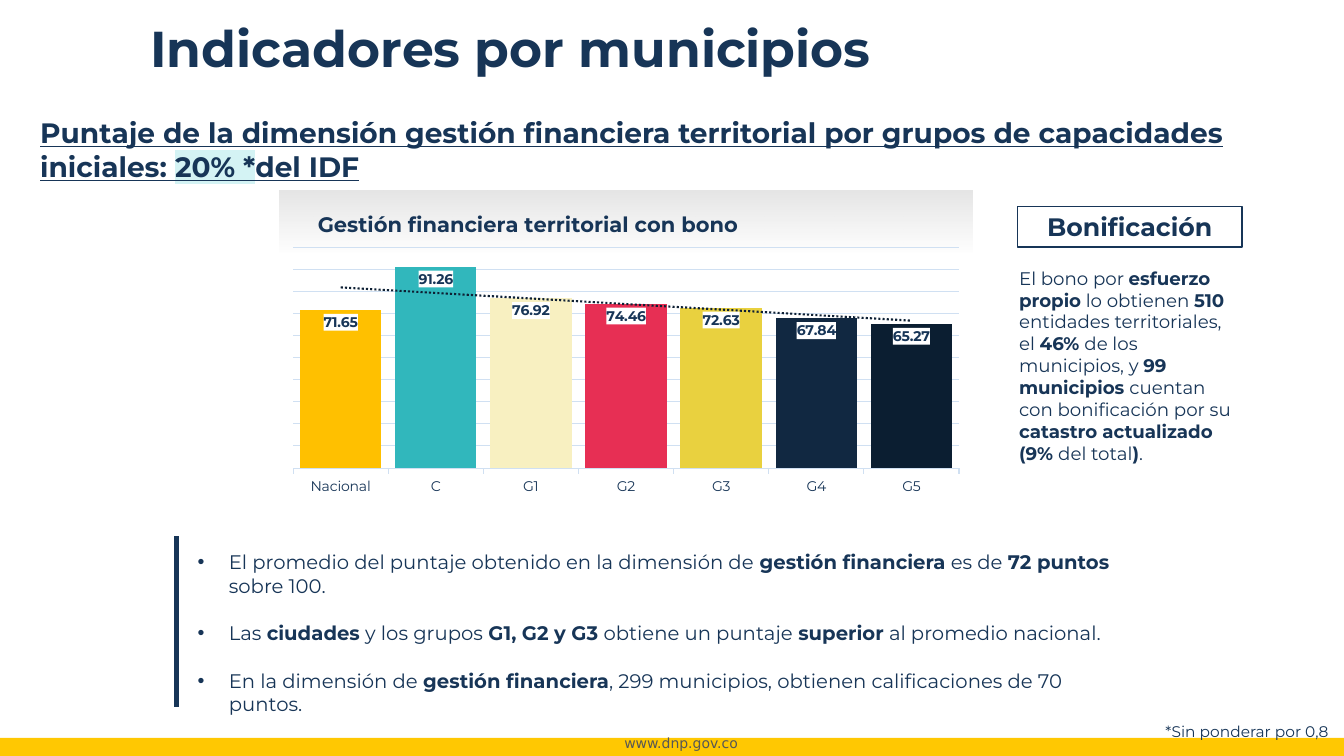
from dataclasses import dataclass, field

from lxml import etree
from pptx import Presentation
from pptx.chart.data import CategoryChartData
from pptx.dml.color import RGBColor
from pptx.enum.chart import XL_CHART_TYPE, XL_LABEL_POSITION, XL_TICK_MARK
from pptx.enum.shapes import MSO_CONNECTOR, MSO_SHAPE
from pptx.enum.text import MSO_ANCHOR, MSO_AUTO_SIZE, PP_ALIGN
from pptx.oxml import parse_xml
from pptx.oxml.ns import nsdecls, qn
from pptx.util import Inches, Pt

RECT, STRAIGHT = MSO_SHAPE.RECTANGLE, MSO_CONNECTOR.STRAIGHT
LEFT, CENTER = PP_ALIGN.LEFT, PP_ALIGN.CENTER
TOP, MIDDLE = MSO_ANCHOR.TOP, MSO_ANCHOR.MIDDLE
COLUMNS, INSIDE_END = XL_CHART_TYPE.COLUMN_CLUSTERED, XL_LABEL_POSITION.INSIDE_END
TICK_OUT, NO_FIT = XL_TICK_MARK.OUTSIDE, MSO_AUTO_SIZE.NONE
FONT = "Montserrat"
COLORS = {
    "navy": "173557", "white": "FFFFFF", "yellow": "FFC802", "gray": "575756",
    "shade": "4D4D4D", "grid": "D0E0F2", "trend": "0E2034", "highlight": "D4F3F4",
}


@dataclass
class Block:
    """Text in a box; ** switches bold and | switches highlight."""
    box: tuple[float, float, float, float]
    text: str
    size: float
    align: PP_ALIGN = LEFT
    after: float = 0
    fmt: dict = field(default_factory=dict)


@dataclass
class Bar:
    label: str
    value: float
    color: str


TITLE = Block((1.39, 0.18, 10, 0.65), "Indicadores por municipios", 36, fmt={"bold": True})
BADGE = Block((10.09, 2.05, 2.23, 0.4), "Bonificación", 18, CENTER, fmt={"bold": True})
TEXTS = [
    Block((5.7, 7.24, 2.11, 0.27), "www.dnp.gov.co", 10, CENTER,
          fmt={"name": "DejaVu Sans", "color": "gray"}),
    Block((0.3, 1.1, 12.22, 0.77),
          "Puntaje de la dimensión gestión financiera territorial por grupos de "
          "capacidades iniciales: |20% *|del IDF", 20, after=6,
          fmt={"bold": True, "underline": True}),
    Block((10.01, 2.6, 2.36, 2.34),
          "El bono por **esfuerzo propio** lo obtienen **510** entidades territoriales, "
          "el **46% **de los municipios, y **99 municipios **cuentan con bonificación "
          "por su** catastro actualizado (9% **del total**)**.", 13),
    Block((11.2, 7.11, 2.34, 0.29), "*Sin ponderar por 0,8", 11, CENTER, after=6),
]
BULLETS = [
    "El promedio del puntaje obtenido en la dimensión de **gestión financiera** es de "
    "**72 puntos **sobre 100.",
    "Las **ciudades** y los grupos **G1, G2 y G3** obtiene un puntaje **superior** "
    "al promedio nacional.",
    "En la dimensión de **gestión financiera**, 299 municipios, obtienen "
    "calificaciones de 70 puntos.",
]
BARS = [
    Bar("Nacional", 71.65, "FFC000"), Bar("C", 91.26, "31B7BC"),
    Bar("G1", 76.92, "F8F0C1"), Bar("G2", 74.46, "E72F54"),
    Bar("G3", 72.63, "E9D13F"), Bar("G4", 67.84, "112841"),
    Bar("G5", 65.27, "0B1E31"),
]


def rgb(name: str) -> RGBColor:
    return RGBColor.from_string(COLORS[name])


def style(font, size: float, **fmt) -> None:
    font.color.rgb = rgb(fmt.pop("color", "navy"))
    for key, value in {"name": FONT, "size": Pt(size), **fmt}.items():
        setattr(font, key, value)


def write(p, text: str, size: float, **fmt) -> None:
    for i, part in enumerate(text.split("**")):
        for j, piece in enumerate(part.split("|")):
            if not piece:
                continue
            r = p.add_run()
            r.text = piece
            style(r.font, size, **{"bold": i % 2 == 1, **fmt})
            if j % 2:
                mark = parse_xml(f'<a:highlight {nsdecls("a")}><a:srgbClr '
                                 f'val="{COLORS["highlight"]}"/></a:highlight>')
                r.font._element.find(qn("a:latin")).addprevious(mark)


def fill_text(s, block: Block, anchor: MSO_ANCHOR = TOP):
    tf = s.text_frame
    tf.word_wrap, tf.auto_size, tf.vertical_anchor = True, NO_FIT, anchor
    p = tf.paragraphs[0]
    p.alignment, p.space_before, p.space_after = block.align, Pt(0), Pt(block.after)
    write(p, block.text, block.size, **block.fmt)
    return p


def place(s, box: tuple) -> None:
    s.left, s.top, s.width, s.height = map(Inches, box)


def add_rect(slide, box: tuple, color: str):
    s = slide.shapes.add_shape(RECT, *map(Inches, box))
    s.shadow.inherit = False
    s.fill.solid()
    s.fill.fore_color.rgb = rgb(color)
    s.line.fill.background()
    return s


def set_layout(before, inner: bool = False, **values: float) -> None:
    """Fixes the place of a chart part as shares of the chart area."""
    layout = etree.Element(qn("c:layout"))
    manual = etree.SubElement(layout, qn("c:manualLayout"))
    modes = {"layoutTarget": "inner"} if inner else {}
    for key, value in {**modes, "xMode": "edge", "yMode": "edge", **values}.items():
        etree.SubElement(manual, qn(f"c:{key}")).set("val", str(value))
    parent = before.getparent()
    for old in parent.findall(qn("c:layout")):
        parent.remove(old)
    before.addprevious(layout)


def add_scores_chart(slide, box: tuple) -> None:
    data = CategoryChartData(number_format="0.00")
    data.categories = [bar.label for bar in BARS]
    data.add_series("Series 1", [bar.value for bar in BARS])
    chart = slide.shapes.add_chart(COLUMNS, *map(Inches, box), data).chart
    style(chart.font, 10)
    chart.has_legend = False
    p = chart.chart_title.text_frame.paragraphs[0]
    write(p, "Gestión financiera territorial con bono", 15, bold=True)
    set_layout(chart.chart_title._element.find(qn("c:overlay")), x=0.05, y=0.05)

    plot = chart.plots[0]
    plot.gap_width, plot.overlap, plot.vary_by_categories = 17, 18, False
    set_layout(plot._element, inner=True, x=0.02, y=0.18, w=0.96, h=0.7)
    axis, scale = chart.category_axis, chart.value_axis
    axis.major_tick_mark = TICK_OUT
    scale.minimum_scale, scale.maximum_scale, scale.major_unit = 0, 100, 10
    scale.visible, scale.has_major_gridlines = False, True
    for line in (axis.format.line, scale.major_gridlines.format.line):
        line.color.rgb, line.width = rgb("grid"), Pt(0.75)

    # Bars, labels on white and the trend
    series = plot.series[0]
    for i, bar in enumerate(BARS):
        fill = series.points[i].format.fill
        fill.solid()
        fill.fore_color.rgb = RGBColor.from_string(bar.color)
    labels = series.data_labels
    labels.show_value, labels.position = True, INSIDE_END
    labels.number_format, labels.number_format_is_linked = "0.00", False
    style(labels.font, 10, bold=True)
    labels._element.find(qn("c:numFmt")).addnext(parse_xml(
        f'<c:spPr {nsdecls("c", "a")}><a:solidFill><a:srgbClr val="{COLORS["white"]}"/>'
        '</a:solidFill></c:spPr>'))
    series._element.find(qn("c:cat")).addprevious(parse_xml(
        f'<c:trendline {nsdecls("c", "a")}><c:spPr><a:ln w="{Pt(1.5)}"><a:solidFill>'
        f'<a:srgbClr val="{COLORS["trend"]}"/></a:solidFill><a:prstDash val="sysDot"/>'
        '</a:ln></c:spPr><c:trendlineType val="linear"/><c:dispRSqr val="0"/>'
        '<c:dispEq val="0"/></c:trendline>'))


def main() -> None:
    prs = Presentation()
    prs.slide_width, prs.slide_height = Inches(13.33), Inches(7.5)
    slide = prs.slides.add_slide(prs.slide_layouts[1])

    # Title
    title, body = slide.placeholders
    place(title, TITLE.box)
    fill_text(title, TITLE, MIDDLE).line_spacing = 0.9

    # Findings
    place(body, (1.86, 5.41, 9.33, 1.75))
    tf = body.text_frame
    tf.auto_size = NO_FIT
    for i, text in enumerate(BULLETS):
        p = tf.paragraphs[0] if i == 0 else tf.add_paragraph()
        pPr = p._p.get_or_add_pPr()
        pPr.set("marL", str(Inches(0.31)))
        pPr.set("indent", str(-Inches(0.31)))
        etree.SubElement(pPr, qn("a:buFont")).set("typeface", "Arial")
        etree.SubElement(pPr, qn("a:buChar")).set("char", "•")
        p.space_before = Pt(17 if i else 0)
        write(p, text, 14)
    rule = slide.shapes.add_connector(STRAIGHT, *map(Inches, (1.75, 5.32, 1.75, 7.01)))
    rule.line.color.rgb, rule.line.width = rgb("navy"), Pt(3)
    etree.SubElement(rule._element.spPr, qn("a:effectLst"))

    # Footer band and plain texts
    add_rect(slide, (0, 7.32, 13.33, 0.2), "yellow")
    for block in TEXTS:
        fill_text(slide.shapes.add_textbox(*map(Inches, block.box)), block)

    # Bonus heading
    s = add_rect(slide, BADGE.box, "white")
    s.line.color.rgb, s.line.width = rgb("navy"), Pt(1)
    fill_text(s, BADGE, MIDDLE)

    # Chart over a fading band
    band = add_rect(slide, (2.77, 1.89, 6.88, 0.64), "shade")
    band.fill.gradient()
    band.fill.gradient_angle = 270
    for stop, position, alpha in zip(band.fill.gradient_stops, (0, 1), (15000, 0)):
        stop.position, stop.color.rgb = position, rgb("shade")
        color = stop._gs.find(qn("a:srgbClr"))
        etree.SubElement(color, qn("a:alpha")).set("val", str(alpha))
    add_scores_chart(slide, (2.77, 1.89, 6.88, 3.13))
    prs.save("out.pptx")


if __name__ == "__main__":
    main()
